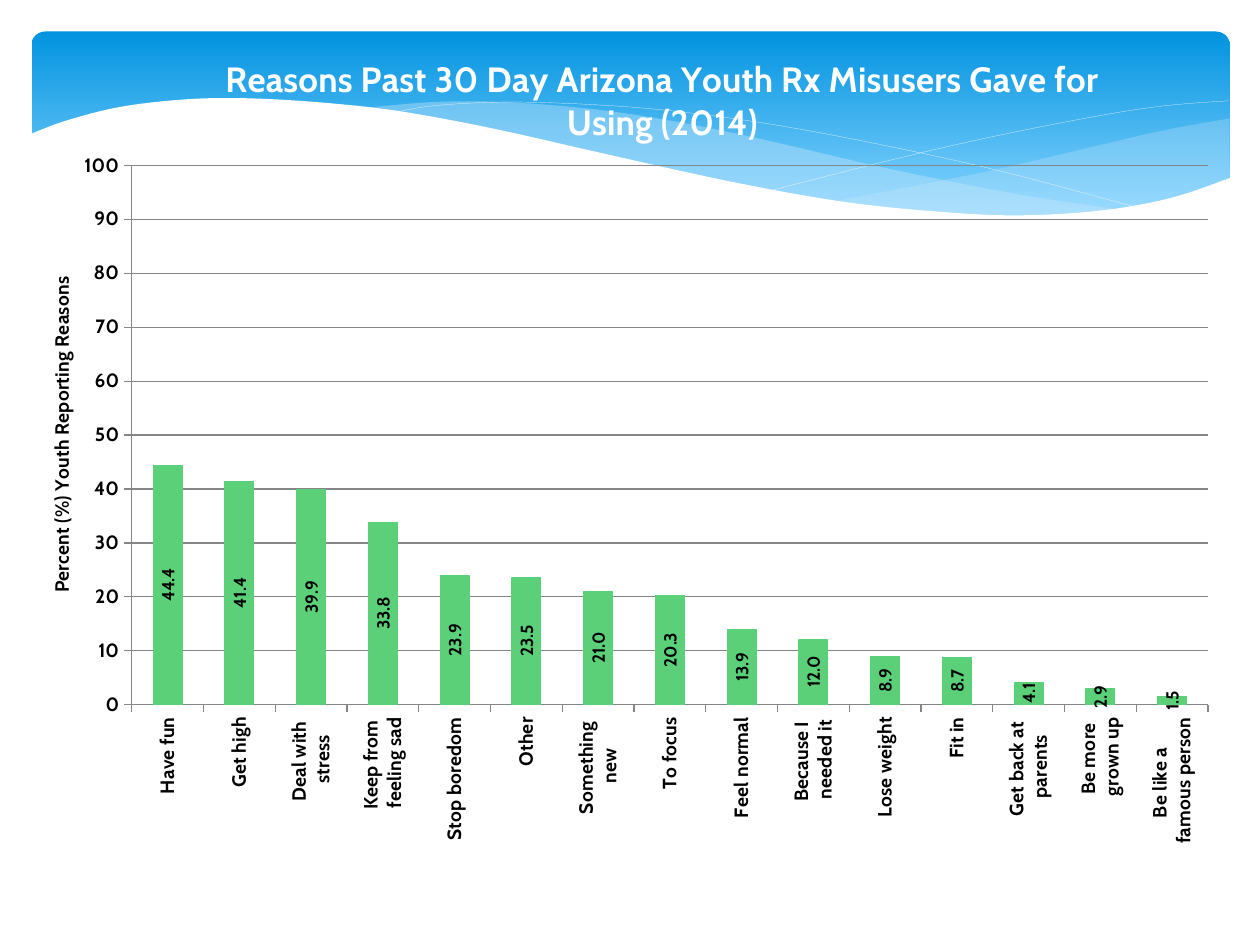
from lxml import etree
from pptx import Presentation
from pptx.chart.data import CategoryChartData
from pptx.dml.color import RGBColor
from pptx.enum.chart import XL_CHART_TYPE, XL_LABEL_POSITION, XL_TICK_MARK
from pptx.enum.shapes import MSO_SHAPE
from pptx.oxml.ns import qn
from pptx.util import Inches, Pt

COLUMNS = XL_CHART_TYPE.COLUMN_CLUSTERED
CENTER = XL_LABEL_POSITION.CENTER
OUTSIDE = XL_TICK_MARK.OUTSIDE
ROUNDED = MSO_SHAPE.ROUNDED_RECTANGLE

WHITE = RGBColor(0xFF, 0xFF, 0xFF)
BLACK = RGBColor(0, 0, 0)
DEEP_BLUE = RGBColor(0x02, 0x93, 0xE0)
SKY_BLUE = RGBColor(0x83, 0xD3, 0xFE)
PALE_BLUE = RGBColor(0xC6, 0xE7, 0xFC)
GREEN = RGBColor(0x5B, 0xD0, 0x78)
GRAY = RGBColor(0x86, 0x86, 0x86)
FONT = "Cabin"

REASONS = [
    ("Have fun", 44.4), ("Get high", 41.4), ("Deal with \nstress", 39.9),
    ("Keep from\n feeling sad", 33.8), ("Stop boredom", 23.9), ("Other", 23.5),
    ("Something \nnew", 21), ("To focus", 20.3), ("Feel normal", 13.9),
    ("Because I \nneeded it", 12), ("Lose weight", 8.9), ("Fit in", 8.7),
    ("Get back at \nparents", 4.1), ("Be more \ngrown up", 2.9),
    ("Be like a \nfamous person", 1.5),
]

RIGHT_TOP = [(9.76, 0.94), (9.21, 1.04), (8.61, 1.18), (7.79, 1.37), (6.61, 1.6)]
RIGHT_BOTTOM = [(6.61, 1.6), (7.18, 1.67), (7.69, 1.71), (8.14, 1.72),
                (8.63, 1.7), (9.05, 1.63), (9.42, 1.54), (9.76, 1.41)]
MIDDLE_TOP = [(8.93, 1.67), (8.07, 1.54), (7.06, 1.34), (5.98, 1.09), (5.28, 0.95),
              (4.65, 0.86), (3.99, 0.81), (3.44, 0.81), (2.86, 0.86)]
MIDDLE_BOTTOM = [(2.86, 0.86), (3.62, 0.97), (4.49, 1.16), (5.66, 1.43),
                 (6.5, 1.58), (7.22, 1.68), (7.85, 1.72), (8.38, 1.72), (8.93, 1.67)]
LONG_LINE = [(3.09, 0.9), (3.44, 0.84), (4.01, 0.81), (4.69, 0.83), (5.33, 0.88),
             (6.08, 0.98), (6.95, 1.14), (7.95, 1.36), (9.07, 1.66)]
SHORT_LINE = [(6.13, 1.51), (6.95, 1.3), (7.76, 1.11), (8.66, 0.93),
              (9.24, 0.84), (9.75, 0.8)]
WAVE_TOP = [(9.77, 1.41), (9.3, 1.57), (8.75, 1.67), (8.09, 1.71), (7.44, 1.68),
            (6.68, 1.6), (5.79, 1.44), (4.75, 1.21), (3.91, 1.02), (3.15, 0.88),
            (2.5, 0.81), (1.93, 0.78), (1.46, 0.79), (0.95, 0.85), (0.52, 0.96),
            (0.23, 1.07)]
WAVE_BASE = [(0.23, 2.24), (9.77, 2.24)]


def smooth(points, steps=6):
    padded = [points[0], *points, points[-1]]
    curve = []
    for a, b, c, d in zip(padded, padded[1:], padded[2:], padded[3:]):
        for step in range(steps):
            t = step / steps
            curve.append(tuple(
                0.5 * (2 * q + (r - p) * t + (2 * p - 5 * q + 4 * r - s) * t ** 2
                       + (3 * q - p - 3 * r + s) * t ** 3)
                for p, q, r, s in zip(a, b, c, d)))
    return curve + [points[-1]]


def add_outline(slide, points, close):
    places = [(Inches(x), Inches(y)) for x, y in points]
    builder = slide.shapes.build_freeform(*places[0])
    builder.add_line_segments(places[1:], close=close)
    s = builder.convert_to_shape()
    s.shadow.inherit = False
    return s


def add_wave(slide, points, color, opacity=100):
    s = add_outline(slide, points, True)
    s.fill.solid()
    s.fill.fore_color.rgb = color
    s.line.fill.background()
    if opacity < 100:
        tint = s.fill._xPr.find(qn("a:solidFill"))[0]
        etree.SubElement(tint, qn("a:alpha"), val=str(opacity * 1000))


def add_curve(slide, points):
    s = add_outline(slide, smooth(points), False)
    s.fill.background()
    s.line.color.rgb = WHITE
    s.line.width = Pt(0.1)


def add_banner(slide):
    s = slide.shapes.add_shape(ROUNDED, Inches(0.25), Inches(0.25), Inches(9.51), Inches(1.56))
    s.adjustments[0] = 0.07
    s.shadow.inherit = False
    s.line.fill.background()
    s.fill.gradient()
    s.fill.gradient_angle = 270
    for stop, position, color in zip(s.fill.gradient_stops, (0, 0.9), (DEEP_BLUE, SKY_BLUE)):
        stop.position = position
        stop.color.rgb = color


def style_font(font, size, color=BLACK):
    font.name = FONT
    font.size = Pt(size)
    font.bold = True
    font.color.rgb = color


def set_title(title, text, size, color=BLACK):
    tf = title.text_frame
    tf.text = text
    style_font(tf.paragraphs[0].runs[0].font, size, color)


def set_layout(parent, index, **values):
    for old in parent.findall(qn("c:layout")):
        parent.remove(old)
    layout = etree.Element(qn("c:layout"))
    manual = etree.SubElement(layout, qn("c:manualLayout"))
    for tag, value in values.items():
        etree.SubElement(manual, qn("c:" + tag), val=str(value))
    parent.insert(index, layout)


def style_axis(axis):
    axis.major_tick_mark = OUTSIDE
    axis.format.line.color.rgb = GRAY
    style_font(axis.tick_labels.font, 11)


def add_reasons_chart(slide):
    data = CategoryChartData()
    data.categories = [reason for reason, share in REASONS]
    data.add_series("Series 1", [share for reason, share in REASONS])
    chart = slide.shapes.add_chart(
        COLUMNS, Inches(0.26), Inches(0.31), Inches(9.48), Inches(6.88), data).chart
    chart.has_legend = False
    chart.font.name = FONT
    chart.font.size = Pt(10)
    chart.has_title = True
    set_title(chart.chart_title,
              "Reasons Past 30 Day Arizona Youth Rx Misusers Gave for Using (2014)", 20, WHITE)

    style_axis(chart.category_axis)
    axis = chart.value_axis
    style_axis(axis)
    axis.minimum_scale, axis.maximum_scale, axis.major_unit = 0, 100, 10
    axis.major_gridlines.format.line.color.rgb = GRAY
    set_title(axis.axis_title, "Percent (%) Youth Reporting Reasons", 11)

    plot = chart.plots[0]
    plot.gap_width = 150
    plot.vary_by_categories = False
    bars = plot.series[0]
    bars.format.fill.solid()
    bars.format.fill.fore_color.rgb = GREEN
    bars.format.line.color.rgb = GREEN
    bars.format.line.width = Pt(0.75)
    labels = bars.data_labels
    labels.show_value = True
    labels.position = CENTER
    labels.number_format = "#,##0.0"
    labels.number_format_is_linked = False
    style_font(labels.font, 10)

    root = chart._chartSpace
    for body in root.xpath(".//c:catAx/c:txPr/a:bodyPr | .//c:dLbls/c:txPr/a:bodyPr"):
        body.set("rot", "-5400000")
        body.set("vert", "horz")
    edges = {"xMode": "edge", "yMode": "edge"}
    set_layout(root.xpath("c:chart/c:title")[0], 1, **edges, x=0.156, y=0.01)
    set_layout(root.xpath(".//c:valAx/c:title")[0], 1, **edges, x=0.01, y=0.27)
    set_layout(root.xpath("c:chart/c:plotArea")[0], 0, layoutTarget="inner",
               **edges, x=0.083, y=0.146, w=0.901, h=0.622)


def main():
    prs = Presentation()
    prs.slide_width, prs.slide_height = Inches(10), Inches(7.5)
    slide = prs.slides.add_slide(prs.slide_layouts[6])
    add_banner(slide)
    add_wave(slide, smooth(RIGHT_TOP) + smooth(RIGHT_BOTTOM), PALE_BLUE, 29)
    add_wave(slide, smooth(MIDDLE_TOP) + smooth(MIDDLE_BOTTOM), PALE_BLUE, 40)
    add_curve(slide, LONG_LINE)
    add_curve(slide, SHORT_LINE)
    add_wave(slide, smooth(WAVE_TOP) + WAVE_BASE, WHITE)
    add_reasons_chart(slide)
    prs.save("out.pptx")


if __name__ == "__main__":
    main()
